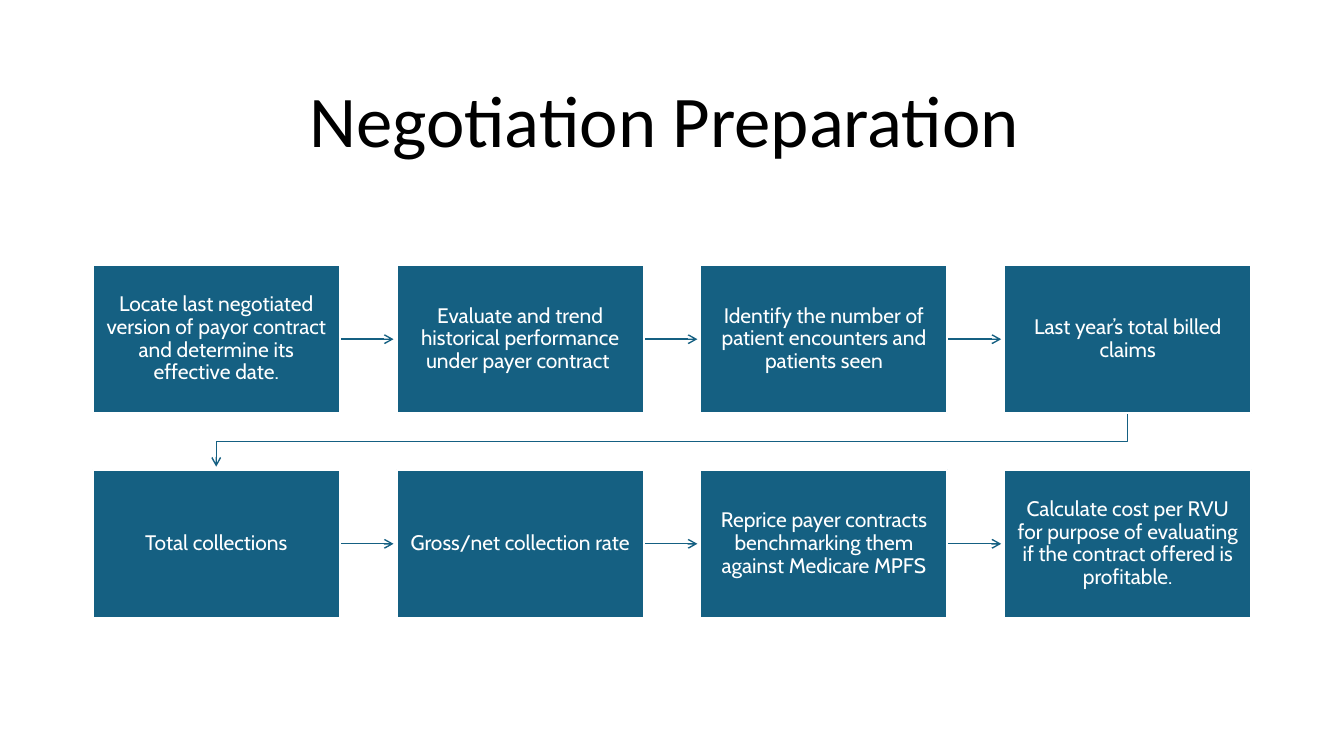
import dataclasses

import lxml.etree
import pptx
import pptx.dml.color
import pptx.enum.shapes
import pptx.enum.text
import pptx.oxml.ns
import pptx.util


@dataclasses.dataclass(frozen=True)
class Theme:
    blue: str = "156082"
    white: str = "FFFFFF"
    black: str = "000000"
    title_font: str = "Calibri"
    step_font: str = "Cabin"
    title_size: float = 52
    step_size: float = 15
    border: float = 1.5
    arrow: float = 1


THEME = Theme()

# Grid of steps, in inches
LEFT, TOP = 0.92, 2.63
BOX_W, BOX_H = 2.45, 1.47
COLS = 4
COL_PITCH = (9.96 - LEFT) / (COLS - 1)
ROW_PITCH = 2.03
ARROW_GAP = 0.03  # space between an arrow tip and the next box

STEPS = [
    "Locate last negotiated version of payor contract and determine its effective date.",
    "Evaluate and trend historical performance under payer contract ",
    "Identify the number of patient encounters and patients seen",
    "Last year’s total billed claims",
    "Total collections",
    "Gross/net collection rate",
    "Reprice payer contracts benchmarking them against Medicare MPFS",
    "Calculate cost per RVU for purpose of evaluating if the contract offered is profitable.",
]


def inches(*values):
    return [pptx.util.Inches(v) for v in values]


def rgb(value):
    return pptx.dml.color.RGBColor.from_string(value)


def cell(index):
    row, col = divmod(index, COLS)
    return LEFT + col * COL_PITCH, TOP + row * ROW_PITCH


def set_text(sp, text, *, font, size, color, margins):
    tf = sp.text_frame
    tf.word_wrap = True
    tf.vertical_anchor = pptx.enum.text.MSO_ANCHOR.MIDDLE
    side, edge = inches(*margins)
    tf.margin_left = tf.margin_right = side
    tf.margin_top = tf.margin_bottom = edge
    p = tf.paragraphs[0]
    p.alignment = pptx.enum.text.PP_ALIGN.CENTER
    p.line_spacing = 0.9
    r = p.add_run()
    r.text = text
    r.font.name = font
    r.font.size = pptx.util.Pt(size)
    r.font.color.rgb = rgb(color)


def add_title(slide, text):
    sp = slide.shapes.add_textbox(*inches(LEFT, 0.61, 11.5, 1.24))
    set_text(sp, text, font=THEME.title_font, size=THEME.title_size,
             color=THEME.black, margins=(0.1, 0.05))


def add_step(slide, index, text):
    sp = slide.shapes.add_shape(pptx.enum.shapes.MSO_SHAPE.RECTANGLE,
                                *inches(*cell(index), BOX_W, BOX_H))
    sp.shadow.inherit = False
    sp.fill.solid()
    sp.fill.fore_color.rgb = rgb(THEME.blue)
    sp.line.color.rgb = rgb(THEME.white)
    sp.line.width = pptx.util.Pt(THEME.border)
    set_text(sp, text, font=THEME.step_font, size=THEME.step_size,
             color=THEME.white, margins=(0.12, 0.13))
    return sp


def style_arrow(slide, sp):
    sp.line.color.rgb = rgb(THEME.blue)
    sp.line.width = pptx.util.Pt(THEME.arrow)
    ln = sp.line._get_or_add_ln()
    lxml.etree.SubElement(ln, pptx.oxml.ns.qn("a:tailEnd"), type="arrow")
    # Arrows lie behind the boxes
    slide.shapes._spTree.insert(2, sp._element)


def add_straight_arrow(slide, box, index):
    x, y = cell(index)
    middle = y + BOX_H / 2
    cxn = slide.shapes.add_connector(
        pptx.enum.shapes.MSO_CONNECTOR.STRAIGHT,
        *inches(x + BOX_W, middle, x + COL_PITCH - ARROW_GAP, middle))
    cxn.begin_connect(box, 3)
    style_arrow(slide, cxn)
    lxml.etree.SubElement(cxn._element.spPr, pptx.oxml.ns.qn("a:effectLst"))


def add_row_arrow(slide, index):
    x1, y1 = cell(index)
    x2, y2 = cell(index + 1)
    x1, x2, y1 = x1 + BOX_W / 2, x2 + BOX_W / 2, y1 + BOX_H
    turn = (y1 + y2) / 2
    builder = slide.shapes.build_freeform(*inches(x1, y1))
    bends = [(x1, turn), (x2, turn), (x2, y2 - ARROW_GAP)]
    builder.add_line_segments([inches(*point) for point in bends], close=False)
    sp = builder.convert_to_shape()
    sp.fill.background()
    sp.shadow.inherit = False
    style_arrow(slide, sp)


def main():
    prs = pptx.Presentation()
    prs.slide_width, prs.slide_height = inches(13.33, 7.5)
    slide = prs.slides.add_slide(prs.slide_layouts[6])

    add_title(slide, "Negotiation Preparation ")

    # Steps, each followed by its arrow to the next one
    for index, text in enumerate(STEPS):
        box = add_step(slide, index, text)
        if (index + 1) % COLS:
            add_straight_arrow(slide, box, index)
        elif index + 1 < len(STEPS):
            add_row_arrow(slide, index)

    prs.save("out.pptx")


if __name__ == "__main__":
    main()
